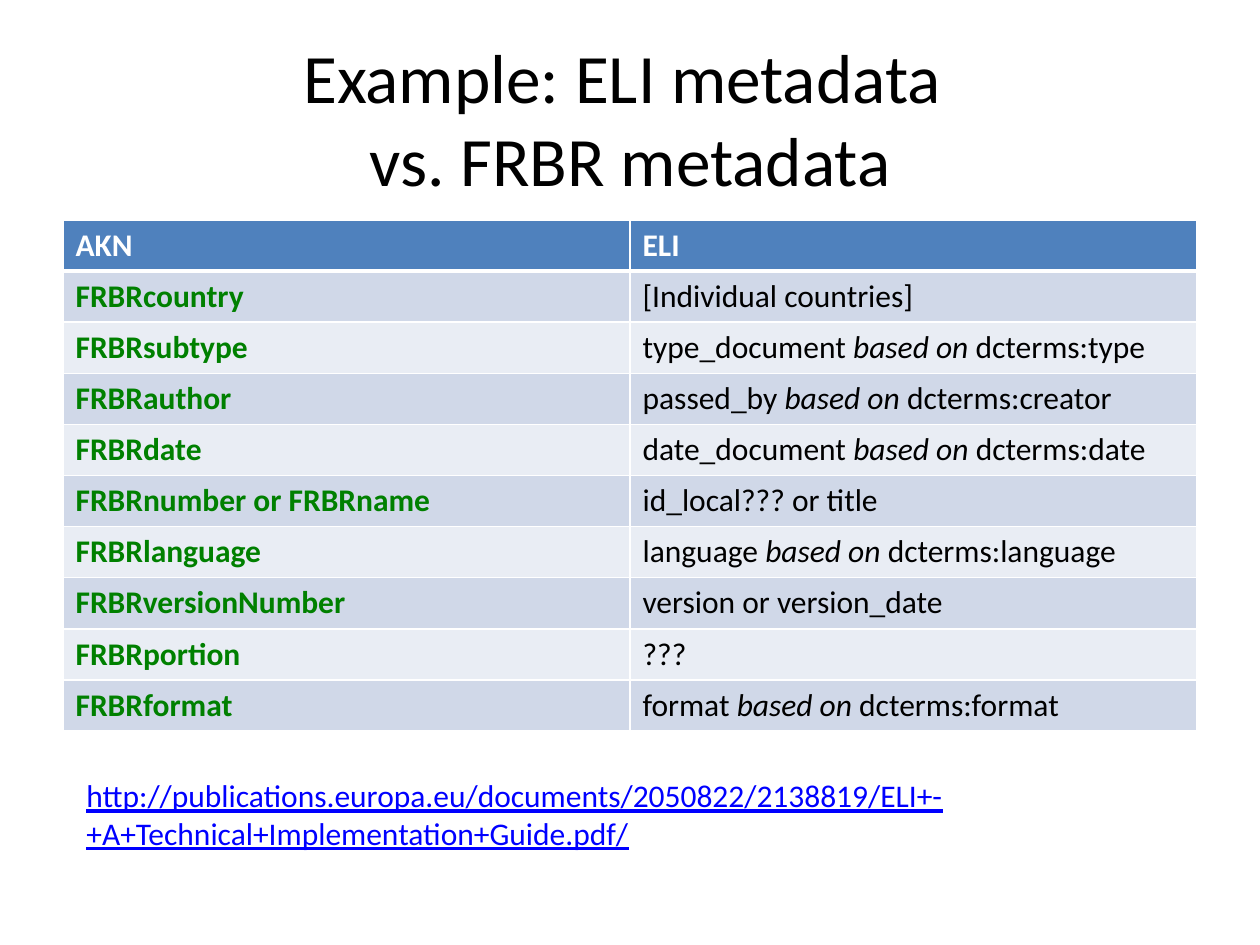
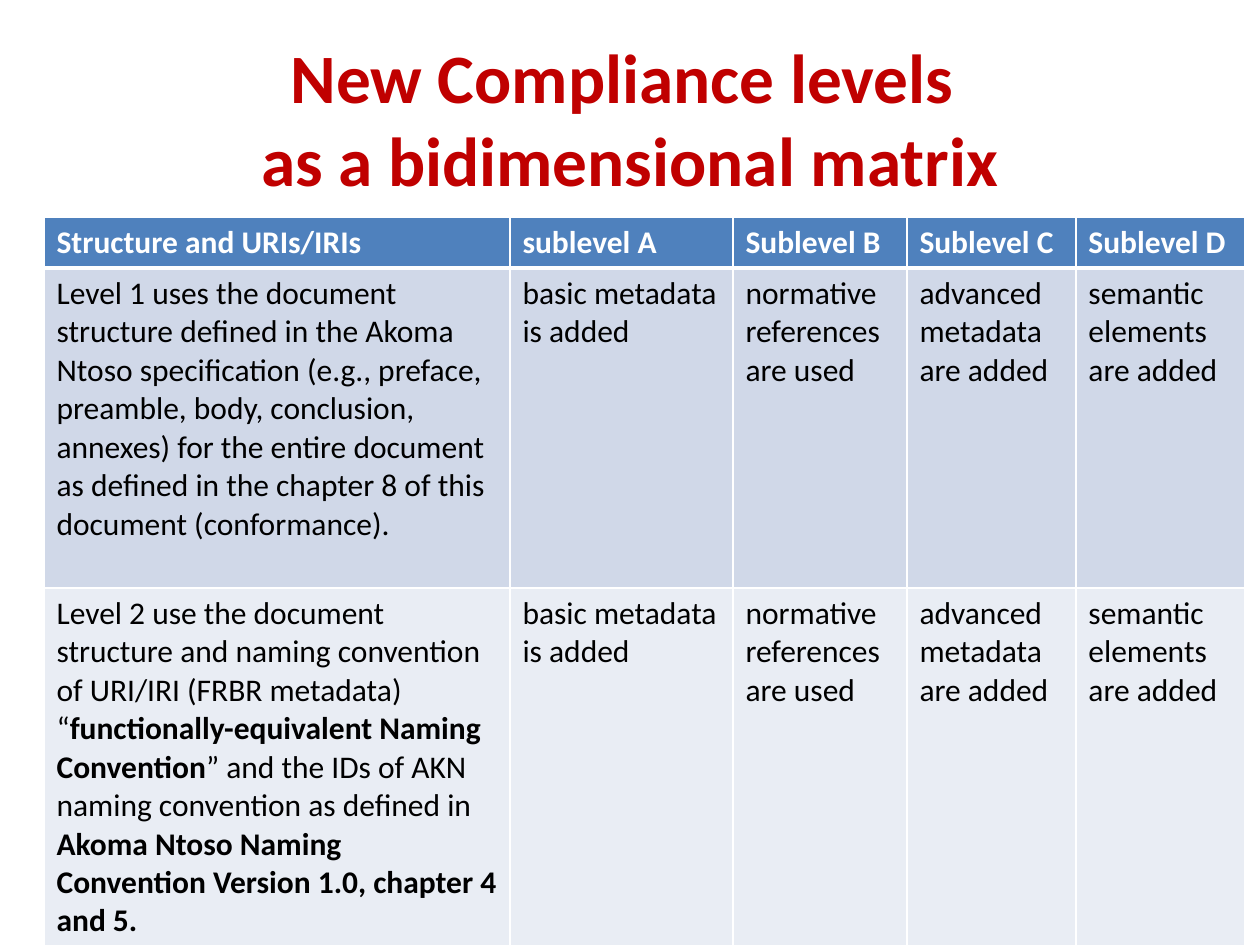
"""Build two slides comparing metadata and compliance levels."""
from lxml import etree
from pptx import Presentation
from pptx.dml.color import RGBColor
from pptx.enum.text import MSO_ANCHOR, MSO_AUTO_SIZE, PP_ALIGN
from pptx.oxml.ns import qn
from pptx.util import Emu, Pt

CENTER = PP_ALIGN.CENTER
MIDDLE = MSO_ANCHOR.MIDDLE
NO_AUTOFIT = MSO_AUTO_SIZE.NONE

FONT = "Calibri"
TITLE_SIZE = 39.6
BODY_SIZE = 18
TITLE_ONLY = 5
SLIDE_WIDTH, SLIDE_HEIGHT = 1260, 945
COLORS = {
    "text": "000000",
    "white": "FFFFFF",
    "header": "4F81BD",
    "odd": "D0D8E8",
    "even": "E9EDF4",
    "term": "008000",
    "link": "0000FF",
    "alert": "C00000",
}

FRBR_TO_ELI = [
    ("FRBRcountry", "[Individual countries]", None),
    ("FRBRsubtype", "type_document", "type"),
    ("FRBRauthor", "passed_by", "creator"),
    ("FRBRdate", "date_document", "date"),
    ("FRBRnumber or FRBRname", "id_local??? or title", None),
    ("FRBRlanguage", "language", "language"),
    ("FRBRversionNumber", "version or version_date", None),
    ("FRBRportion", "???", None),
    ("FRBRformat", "format", "format"),
]
LEVELS = [
    [("Level 1 uses the document structure defined in the Akoma Ntoso specification "
      "(e.g., preface, preamble, body, conclusion, annexes) for the entire document "
      "as defined in the chapter 8 of this document (conformance).", "")],
    [("Level 2 use the document structure and naming convention of URI/IRI (FRBR metadata) “", ""),
     ("functionally-equivalent Naming Convention", "bold"),
     ("” and the IDs of AKN naming convention as defined in ", ""),
     ("Akoma Ntoso Naming Convention Version 1.0, chapter 4 and 5.", "bold")],
]
SUBLEVELS = {
    "sublevel A": "basic metadata is added",
    "Sublevel B": "normative references are used",
    "Sublevel C": "advanced metadata are added",
    "Sublevel D": "semantic elements are added",
}
GUIDE_ADDRESS = ("http://publications.europa.eu/documents/2050822/2138819/"
                 "ELI+-+A+Technical+Implementation+Guide.pdf/")


def px(length):
    """Convert px at 126 to the inch into EMU."""
    return Emu(round(length * 914400 / 126))


def rgb(color):
    """Return the named colour."""
    return RGBColor.from_string(COLORS[color])


class Deck:
    """Hold the shared style and the current slide."""

    def __init__(self):
        """Start an empty presentation."""
        self.presentation = Presentation()
        self.presentation.slide_width = px(SLIDE_WIDTH)
        self.presentation.slide_height = px(SLIDE_HEIGHT)
        self.slide = None

    def style(self, paragraph, size, color, bold=False):
        """Set the font of a whole paragraph."""
        font = paragraph.font
        font.name, font.size, font.bold = FONT, Pt(size), bold
        font.color.rgb = rgb(color)

    def add_slide(self, title, color="text", bold=False):
        """Add a slide with a centred title."""
        layout = self.presentation.slide_layouts[TITLE_ONLY]
        self.slide = self.presentation.slides.add_slide(layout)
        shape = self.slide.shapes.title
        shape.left, shape.top, shape.width, shape.height = map(px, (63, 38, 1134, 158))
        frame = shape.text_frame
        frame.text = title
        frame.auto_size = NO_AUTOFIT
        frame.vertical_anchor = MIDDLE
        paragraph = frame.paragraphs[0]
        paragraph.alignment = CENTER
        self.style(paragraph, TITLE_SIZE, color, bold)

    def add_address(self, text, left, top, width, height):
        """Add an underlined web address as text."""
        box = self.slide.shapes.add_textbox(*map(px, (left, top, width, height)))
        frame = box.text_frame
        frame.word_wrap = True
        frame.text = text
        self.style(frame.paragraphs[0], BODY_SIZE, "link")
        frame.paragraphs[0].font.underline = True

    def add_border(self, cell, side, points):
        """Draw one white border of a cell."""
        line = etree.SubElement(cell._tc.get_or_add_tcPr(), qn(f"a:ln{side}"),
                                w=str(Pt(points)))
        fill = etree.SubElement(line, qn("a:solidFill"))
        etree.SubElement(fill, qn("a:srgbClr"), val=COLORS["white"])

    def fill_cell(self, cell, runs, row_index, color, bold):
        """Write styled runs into a cell and give it its band and borders."""
        for side in "LRTB":
            thick = (side, row_index) in (("B", 0), ("T", 1))
            self.add_border(cell, side, 3 if thick else 1)
        cell.fill.solid()
        band = "header" if row_index == 0 else "odd" if row_index % 2 else "even"
        cell.fill.fore_color.rgb = rgb(band)
        paragraph = cell.text_frame.paragraphs[0]
        self.style(paragraph, BODY_SIZE, color, bold)
        for text, emphasis in runs:
            run = paragraph.add_run()
            run.text = text
            if emphasis == "bold":
                run.font.bold = True
            elif emphasis == "italic":
                run.font.italic = True

    def add_table(self, left, top, widths, heights, rows, terms=False):
        """Add a banded table, with green bold terms in column one if asked."""
        shape = self.slide.shapes.add_table(
            len(rows), len(widths), px(left), px(top), px(sum(widths)), px(sum(heights)))
        table = shape.table
        for column, width in zip(table.columns, widths):
            column.width = px(width)
        for row_index, (row, height) in enumerate(zip(rows, heights)):
            table.rows[row_index].height = px(height)
            for column_index, runs in enumerate(row):
                is_header = row_index == 0
                is_term = terms and column_index == 0
                color = "white" if is_header else "term" if is_term else "text"
                self.fill_cell(table.cell(row_index, column_index), runs, row_index,
                               color, is_header or is_term)


def plain(text):
    """Return text as one run without emphasis."""
    return [(text, "")]


def eli_runs(name, base):
    """Return an ELI property with the Dublin Core term it is based on."""
    if base is None:
        return plain(name)
    return [(f"{name} ", ""), ("based on ", "italic"), (f"dcterms:{base}", "")]


def main():
    """Build and save the slides."""
    deck = Deck()

    deck.add_slide("Example: ELI metadata \vvs. FRBR metadata")
    mapping = [[plain("AKN"), plain("ELI")]]
    mapping += [[plain(term), eli_runs(name, base)] for term, name, base in FRBR_TO_ELI]
    deck.add_table(63, 220, [567] * 2, [51] * len(mapping), mapping, terms=True)
    deck.add_address(GUIDE_ADDRESS, 74, 770, 1160, 90)

    deck.add_slide("New Compliance levels \vas a bidimensional matrix", "alert", True)
    matrix = [[plain(text) for text in ("Structure and URIs/IRIs", *SUBLEVELS)]]
    matrix += [[level, *map(plain, SUBLEVELS.values())] for level in LEVELS]
    deck.add_table(44, 217, [466, 223, 174, 169, 169], [51, 320, 358], matrix)

    deck.presentation.save("out.pptx")


if __name__ == "__main__":
    main()
